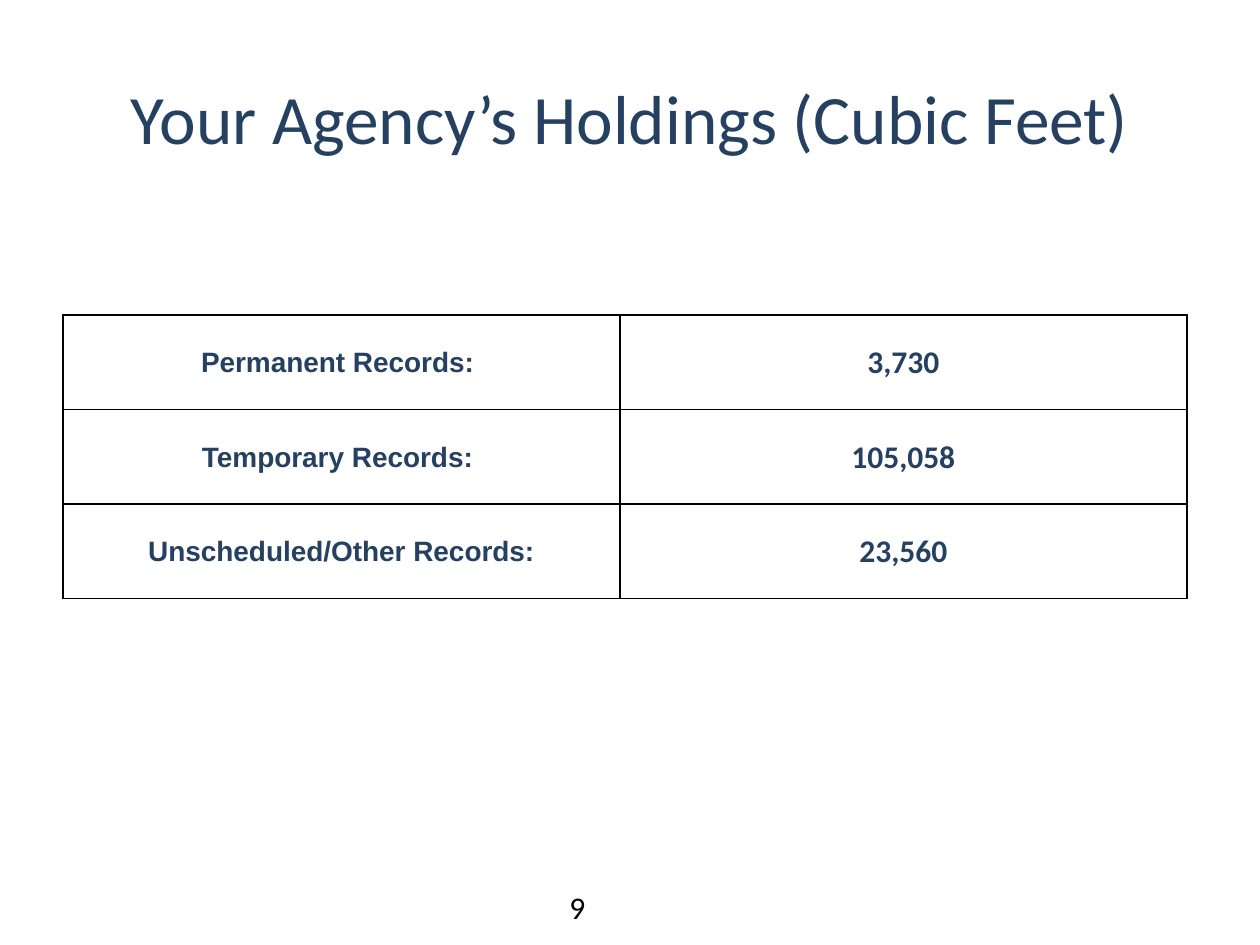
from dataclasses import dataclass

from lxml.etree import SubElement
from pptx import Presentation
from pptx.dml.color import RGBColor
from pptx.enum.text import MSO_ANCHOR, MSO_AUTO_SIZE, PP_ALIGN
from pptx.oxml.ns import qn
from pptx.util import Pt

HUES = {"navy": "254061", "black": "000000", "white": "FFFFFF"}
COLS = (318.24, 324)
ROW = 54


@dataclass
class Style:
    name: str
    size: float
    hue: str = "navy"
    bold: bool = False


@dataclass
class Holding:
    label: str
    feet: str


TITLE = Style("Calibri", 39.6)
LABEL = Style("Arial", 16, bold=True)
VALUE = Style("Calibri", 18, bold=True)
PAGE = Style("Calibri", 18, "black")

HOLDINGS = [
    Holding("Permanent Records: ", "3,730"),
    Holding("Temporary Records: ", "105,058"),
    Holding("Unscheduled/Other Records:", "23,560"),
]


def write(frame, text: str, style: Style, align=PP_ALIGN.CENTER) -> None:
    para = frame.paragraphs[0]
    para.alignment = align
    run = para.add_run()
    run.text = text
    form = {"name": style.name, "size": Pt(style.size), "bold": style.bold}
    for key, value in form.items():
        setattr(run.font, key, value)
    run.font.color.rgb = RGBColor.from_string(HUES[style.hue])


def place(shape, left: float, top: float, width: float, height: float) -> None:
    box = {"left": left, "top": top, "width": width, "height": height}
    for key, value in box.items():
        setattr(shape, key, Pt(value))


def rule(cell) -> None:
    """Draw a thin black border on all four sides; lines precede the fill."""
    props = cell._tc.get_or_add_tcPr()
    for side in ("a:lnL", "a:lnR", "a:lnT", "a:lnB"):
        line = SubElement(props, qn(side), w=str(Pt(1)))
        fill = SubElement(line, qn("a:solidFill"))
        SubElement(fill, qn("a:srgbClr"), val=HUES["black"])


def fill_cell(cell, text: str, style: Style) -> None:
    form = {
        "vertical_anchor": MSO_ANCHOR.MIDDLE,
        "margin_left": Pt(0.75),
        "margin_right": Pt(0.75),
        "margin_top": Pt(0.75),
        "margin_bottom": Pt(0),
    }
    for key, value in form.items():
        setattr(cell, key, value)
    rule(cell)
    cell.fill.solid()
    cell.fill.fore_color.rgb = RGBColor.from_string(HUES["white"])
    write(cell.text_frame, text, style)


def add_title(slide) -> None:
    title = slide.shapes.title
    place(title, 36, 21.6, 648, 90)
    frame = title.text_frame
    frame.auto_size = MSO_AUTO_SIZE.NONE
    frame.vertical_anchor = MSO_ANCHOR.MIDDLE
    write(frame, "Your Agency’s Holdings (Cubic Feet)", TITLE)


def add_grid(slide) -> None:
    count = len(HOLDINGS)
    grid = slide.shapes.add_table(
        count, len(COLS), Pt(36), Pt(180), Pt(sum(COLS)), Pt(count * ROW)
    ).table
    for col, width in zip(grid.columns, COLS):
        col.width = Pt(width)
    for num, item in enumerate(HOLDINGS):
        grid.rows[num].height = Pt(ROW)
        fill_cell(grid.cell(num, 0), item.label, LABEL)
        fill_cell(grid.cell(num, 1), item.feet, VALUE)


def add_page(slide) -> None:
    box = slide.shapes.add_textbox(Pt(318.24), Pt(504), Pt(36), Pt(28.8))
    box.text_frame.word_wrap = False
    write(box.text_frame, "9", PAGE, PP_ALIGN.LEFT)


def main() -> None:
    deck = Presentation()
    deck.slide_width, deck.slide_height = Pt(720), Pt(540)
    slide = deck.slides.add_slide(deck.slide_layouts[5])
    add_page(slide)
    add_title(slide)
    add_grid(slide)
    deck.save("out.pptx")


if __name__ == "__main__":
    main()
